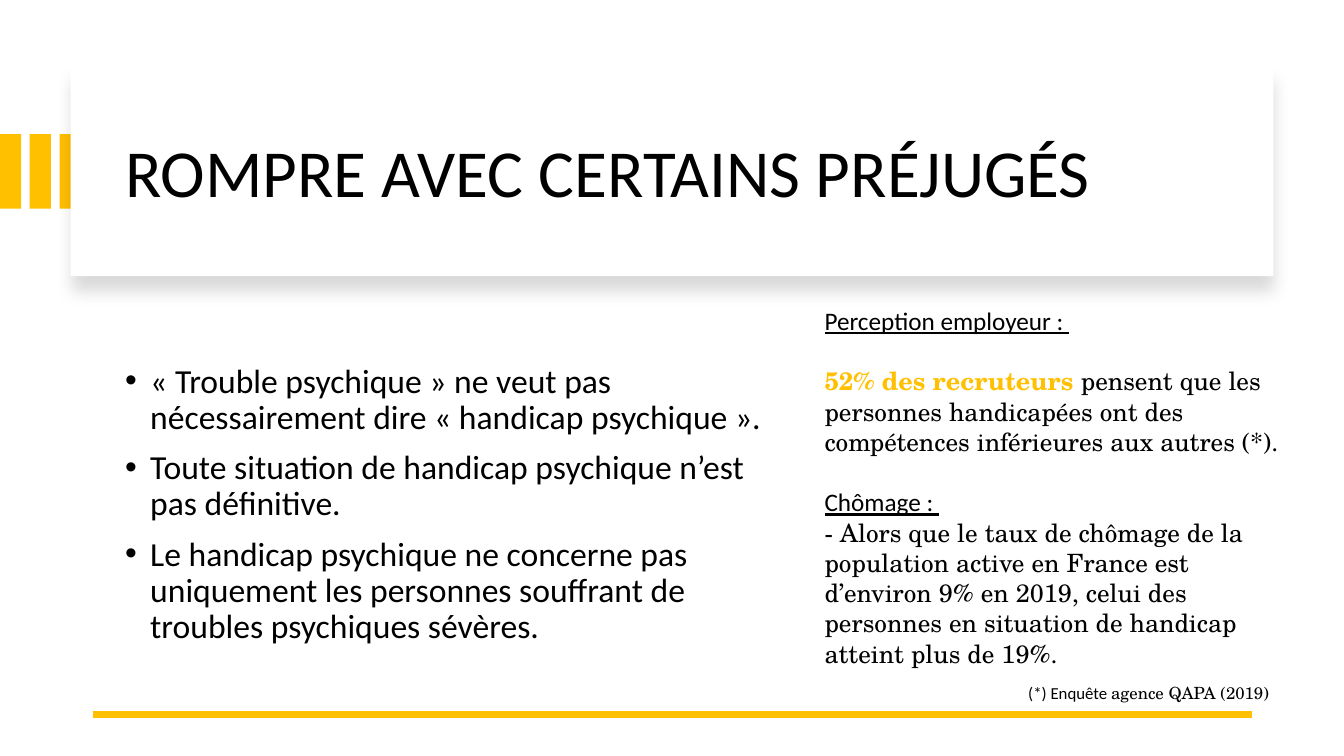
from lxml.etree import SubElement
from pptx import Presentation
from pptx.dml.color import RGBColor
from pptx.enum.shapes import MSO_CONNECTOR, MSO_SHAPE
from pptx.enum.text import MSO_ANCHOR, MSO_AUTO_SIZE, PP_ALIGN
from pptx.oxml.ns import qn
from pptx.util import Inches, Pt

COLORS = {"gold": "FFC000", "black": "000000", "white": "FFFFFF"}
SANS, SERIF = "Calibri", "TeX Gyre Schola"

FORMATS = {
    "title": {"name": SANS, "size": Pt(48)},
    "bullet": {"name": SANS, "size": Pt(24)},
    "heading": {"name": SANS, "size": Pt(18), "underline": True},
    "key": {"name": SERIF, "size": Pt(18), "bold": True},
    "fact": {"name": SERIF, "size": Pt(18)},
    "note": {"name": SANS, "size": Pt(12)},
    "source": {"name": SERIF, "size": Pt(12)},
}

TITLE = [[("ROMPRE AVEC CERTAINS PRÉJUGÉS", "title")]]
PREJUDICES = [
    [("« Trouble psychique » ne veut pas nécessairement dire « handicap psychique ».", "bullet")],
    [("Toute situation de handicap psychique n’est pas définitive.", "bullet")],
    [("Le handicap psychique ne concerne pas uniquement les personnes "
      "souffrant de troubles psychiques sévères.", "bullet")],
]
FACTS = [
    [("Perception employeur : ", "heading")],
    [("52% des recruteurs ", "key"),
     ("pensent que les personnes handicapées ont des compétences "
      "inférieures aux autres (*).", "fact")],
    [("Chômage : ", "heading")],
    [("- Alors que le taux de chômage de la population active en France est "
      "d’environ 9% en 2019, celui des personnes en situation de handicap "
      "atteint plus de 19%.", "fact")],
]
FACT_GAPS = [0, 21.6, 21.6, 0]
FOOTNOTE = [[("(*) Enquête ", "note"), ("agence QAPA (2019)", "source")]]

BOXES = {
    "title": (1.14, 0.89, 10.87, 1.7),
    "prejudices": (1.14, 3.3, 6.82, 3.42),
    "facts": (8.08, 2.98, 4.84, 3.43),
    "footnote": (10.1, 6.72, 3.24, 0.3),
    "card": (0.7, 0.67, 11.93, 2.07),
}
STRIPES, STRIPE_STEP = 3, 0.295
STRIPE_TOP, STRIPE_WIDTH, STRIPE_HEIGHT = 1.33, 0.21, 0.74
RULE_LEFT, RULE_RIGHT, RULE_TOP = 0.92, 12.42, 7.09


def rgb(color):
    return RGBColor.from_string(COLORS[color])


def add_block(slide, box, color):
    block = slide.shapes.add_shape(MSO_SHAPE.RECTANGLE, *map(Inches, box))
    block.shadow.inherit = False
    block.fill.solid()
    block.fill.fore_color.rgb = rgb(color)
    block.line.fill.background()
    return block


def add_card_shadow(card):
    effects = card.element.spPr.find(qn("a:effectLst"))
    shadow = SubElement(effects, qn("a:outerShdw"), blurRad=str(Pt(11)),
                        dist=str(Pt(10)), dir="5400000", algn="t", rotWithShape="0")
    tint = SubElement(shadow, qn("a:srgbClr"), val=COLORS["black"])
    SubElement(tint, qn("a:alpha"), val="15000")


def write(holder, paragraphs, gaps, anchor=MSO_ANCHOR.TOP, spacing=1.0, bullets=False):
    frame = holder.text_frame
    frame.word_wrap = True
    frame.auto_size = MSO_AUTO_SIZE.NONE
    frame.vertical_anchor = anchor
    for index, (runs, gap) in enumerate(zip(paragraphs, gaps)):
        paragraph = frame.add_paragraph() if index else frame.paragraphs[0]
        paragraph.alignment = PP_ALIGN.LEFT
        paragraph.line_spacing = spacing
        paragraph.space_before = Pt(gap)
        if bullets:
            properties = paragraph._p.get_or_add_pPr()
            properties.set("marL", str(Inches(0.25)))
            properties.set("indent", str(-Inches(0.25)))
            SubElement(properties, qn("a:buFont"), typeface="Arial")
            SubElement(properties, qn("a:buChar"), char="•")
        for words, style in runs:
            run = paragraph.add_run()
            run.text = words
            for attribute, value in FORMATS[style].items():
                setattr(run.font, attribute, value)
            run.font.color.rgb = rgb("gold" if style == "key" else "black")


def place(holder, box):
    for side, length in zip(("left", "top", "width", "height"), box):
        setattr(holder, side, Inches(length))
    holder.element.getparent().append(holder.element)


def main():
    deck = Presentation()
    deck.slide_width, deck.slide_height = Inches(13.33), Inches(7.5)
    slide = deck.slides.add_slide(deck.slide_layouts[1])

    for number in range(STRIPES):
        add_block(slide, (number * STRIPE_STEP, STRIPE_TOP, STRIPE_WIDTH, STRIPE_HEIGHT), "gold")
    add_card_shadow(add_block(slide, BOXES["card"], "white"))

    title, prejudices = slide.shapes.title, slide.placeholders[1]
    place(title, BOXES["title"])
    write(title, TITLE, [0], MSO_ANCHOR.MIDDLE, 0.9)
    place(prejudices, BOXES["prejudices"])
    write(prejudices, PREJUDICES, [0, 10, 10], MSO_ANCHOR.MIDDLE, 0.9, True)

    rule = slide.shapes.add_connector(MSO_CONNECTOR.STRAIGHT, Inches(RULE_RIGHT),
                                      Inches(RULE_TOP), Inches(RULE_LEFT), Inches(RULE_TOP))
    rule.line.color.rgb = rgb("gold")
    rule.line.width = Pt(4.5)
    SubElement(rule.element.spPr, qn("a:effectLst"))

    facts = slide.shapes.add_textbox(*map(Inches, BOXES["facts"]))
    write(facts, FACTS, FACT_GAPS)
    footnote = slide.shapes.add_textbox(*map(Inches, BOXES["footnote"]))
    write(footnote, FOOTNOTE, [0])

    deck.save("out.pptx")


if __name__ == "__main__":
    main()
